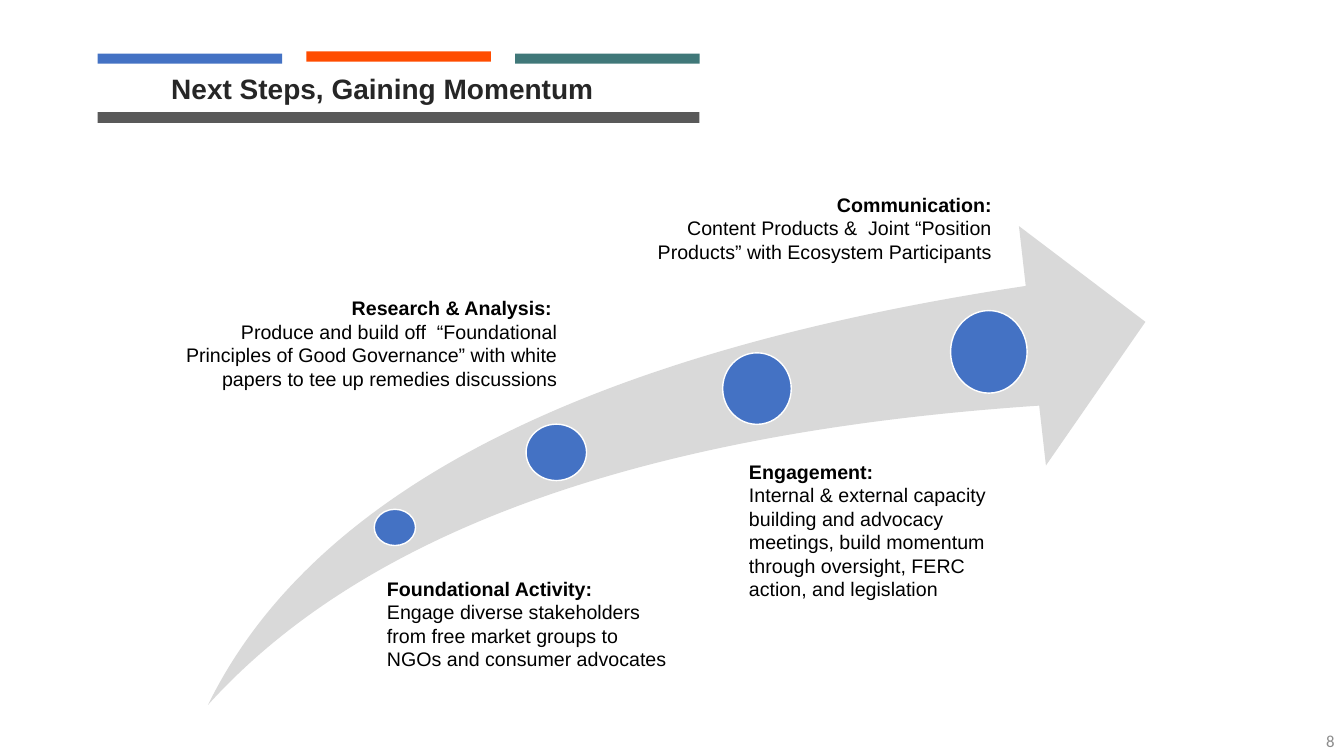
from pptx import Presentation
from pptx.dml.color import RGBColor
from pptx.enum.shapes import MSO_SHAPE
from pptx.enum.text import MSO_ANCHOR, PP_ALIGN
from pptx.util import Pt

RECTANGLE = MSO_SHAPE.RECTANGLE
OVAL = MSO_SHAPE.OVAL
SWOOSH = MSO_SHAPE.SWOOSH_ARROW
LEFT, CENTER, RIGHT = PP_ALIGN.LEFT, PP_ALIGN.CENTER, PP_ALIGN.RIGHT
TOP, MIDDLE = MSO_ANCHOR.TOP, MSO_ANCHOR.MIDDLE

BLUE, ORANGE, TEAL = "4472C4", "FF4C00", "407879"
DARK_GRAY, LIGHT_GRAY, WHITE = "595959", "D9D9D9", "FFFFFF"
BAR_LEFT, BAR_STEP = 69.84, 149.04
BARS = [(BLUE, 38.3), (ORANGE, 36.8), (TEAL, 38.3)]

MILESTONES = [
    {
        "circle": (267.3, 363.8, 29.5, 25.9),
        "box": (269.3, 411.8, 214.6, 82.8),
        "inset": 7.2,
        "align": LEFT,
        "heading": "Foundational Activity:",
        "body": "Engage diverse stakeholders from free market groups to "
                "NGOs and consumer advocates",
    },
    {
        "circle": (375.8, 303, 43.2, 40.3),
        "box": (103.7, 211.7, 294.5, 103.7),
        "inset": 13,
        "align": RIGHT,
        "heading": "Research & Analysis: ",
        "body": "Produce and build off  “Foundational Principles of Good Governance” "
                "with white papers to tee up remedies discussions",
    },
    {
        "circle": (516.2, 252, 49, 51.1),
        "box": (518.4, 328.3, 187.2, 139.7),
        "inset": 16.6,
        "align": LEFT,
        "heading": "Engagement:",
        "body": "Internal & external capacity building and advocacy meetings, "
                "build momentum through oversight, FERC action, and legislation",
    },
    {
        "circle": (679, 221.8, 54.7, 59),
        "box": (443.5, 137.5, 265, 83.5),
        "inset": 22.3,
        "align": RIGHT,
        "heading": "Communication:",
        "body": "Content Products &  Joint “Position Products” "
                "with Ecosystem Participants",
    },
]


def color(value):
    return RGBColor.from_string(value)


def set_attributes(target, values):
    for name, value in values.items():
        setattr(target, name, value)


def add_figure(page, kind, bounds, fill, outline=None):
    figure = page.shapes.add_shape(kind, *map(Pt, bounds))
    figure.shadow.inherit = False
    figure.fill.solid()
    figure.fill.fore_color.rgb = color(fill)
    if outline:
        figure.line.color.rgb = color(outline)
        figure.line.width = Pt(1)
    else:
        figure.line.fill.background()
    return figure


def add_text(page, bounds, lines, insets, align, anchor=TOP, after=0):
    box = page.shapes.add_textbox(*map(Pt, bounds))
    frame = box.text_frame
    sides = ("margin_left", "margin_top", "margin_right", "margin_bottom")
    set_attributes(frame, dict(zip(sides, map(Pt, insets))))
    set_attributes(frame, {"word_wrap": True, "vertical_anchor": anchor})
    for index, (text, font, size, bold, shade) in enumerate(lines):
        para = frame.add_paragraph() if index else frame.paragraphs[0]
        set_attributes(para, {"alignment": align, "space_after": Pt(after)})
        span = para.add_run()
        span.text = text
        set_attributes(span.font, {"name": font, "size": Pt(size), "bold": bold})
        span.font.color.rgb = color(shade)


def add_header(page):
    for index, (fill, top) in enumerate(BARS):
        add_figure(page, RECTANGLE, (BAR_LEFT + index * BAR_STEP, top, 131.8, 7.2), fill)
    title = ("Next Steps, Gaining Momentum", "Arial", 20, True, "262626")
    add_text(page, (BAR_LEFT, 47.5, 429.8, 31.7), [title],
             (7.2, 3.6, 30.2, 3.6), CENTER, after=6)
    add_figure(page, RECTANGLE, (BAR_LEFT, 80.1, 429.8, 7.7), DARK_GRAY)


def add_milestone(page, milestone):
    add_figure(page, OVAL, milestone["circle"], BLUE, WHITE)
    lines = [
        (milestone["heading"], "Arial", 14, True, "000000"),
        (milestone["body"], "Arial", 14, False, "000000"),
    ]
    add_text(page, milestone["box"], lines,
             (milestone["inset"], 0, 0, 0), milestone["align"])


def main():
    deck = Presentation()
    set_attributes(deck, {"slide_width": Pt(960), "slide_height": Pt(540)})
    page = deck.slides.add_slide(deck.slide_layouts[6])
    add_header(page)
    add_text(page, (909.4, 505.4, 51, 48.2), [("8", "Calibri", 12, False, "8C8C8C")],
             (7.2, 3.6, 7.2, 3.6), RIGHT, MIDDLE)
    arrow = add_figure(page, SWOOSH, (148.6, 161.5, 669.6, 342), LIGHT_GRAY)
    for index in range(2):
        arrow.adjustments[index] = 0.25
    for milestone in MILESTONES:
        add_milestone(page, milestone)
    deck.save("out.pptx")


if __name__ == "__main__":
    main()
